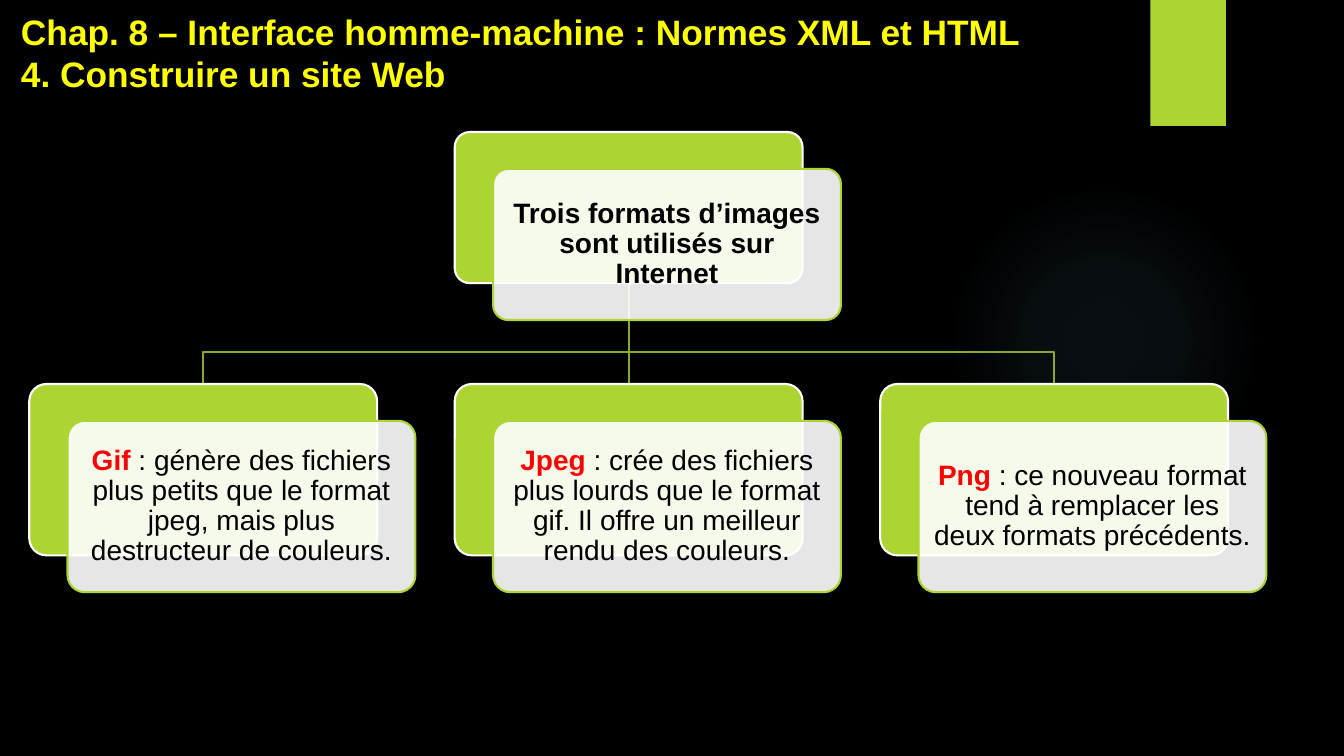
from lxml import etree
from pptx import Presentation
from pptx.dml.color import RGBColor
from pptx.enum.shapes import MSO_CONNECTOR as Link, MSO_SHAPE as Kind
from pptx.enum.text import MSO_ANCHOR as Anchor, PP_ALIGN as Align
from pptx.oxml import parse_xml
from pptx.oxml.ns import nsdecls, qn
from pptx.util import Inches, Pt

TITLE = ["Chap. 8 – Interface homme-machine : Normes XML et HTML",
         "4. Construire un site Web"]
ROOT = [("Trois formats d’images sont utilisés sur Internet", "000000", True)]
FORMATS = [
    ("Gif", " : génère des fichiers plus petits que le format jpeg, "
            "mais plus destructeur de couleurs."),
    ("Jpeg", " : crée des fichiers plus lourds que le format gif. "
             "Il offre un meilleur rendu des couleurs."),
    ("Png", " : ce nouveau format tend à remplacer les deux formats précédents."),
]
GREEN, WIRE, WHITE, GLOW = "ACD433", "8AAA29", "FFFFFF", "7AC4F0"
GLOW_STOPS = [(0, 7), (36, 6), (69, 0)]  # position %, opacity %

LEFT, STEP, WIDE = 0.29, 4.22, 3.45
ROOT_TOP, ROOT_TALL = 1.31, 1.5
LEAF_TOP, LEAF_TALL = 3.81, 1.7
SHIFT_X, SHIFT_Y = 0.38, 0.365
BEND = 3.49

deck = Presentation()
deck.slide_width, deck.slide_height = Inches(13.33), Inches(7.5)
slide = deck.slides.add_slide(deck.slide_layouts[6])
shapes = slide.shapes


def color(code):
    return RGBColor.from_string(code)


def paint(fill, code):
    fill.solid()
    fill.fore_color.rgb = color(code)


def stroke(line, code):
    paint(line.fill, code)
    line.width = Pt(1.5)


def add_box(kind, x, y, w, h, fill, edge=None):
    box = shapes.add_shape(kind, Inches(x), Inches(y), Inches(w), Inches(h))
    box.shadow.inherit = False
    paint(box.fill, fill)
    if edge:
        stroke(box.line, edge)
    else:
        box.line.fill.background()
    return box


def add_run(para, text, size, code, bold):
    run = para.add_run()
    run.text = text
    font = run.font
    font.name, font.size, font.bold = "Arial", Pt(size), bold
    font.color.rgb = color(code)


def add_glow():
    """Faint radial light behind the diagram."""
    glow = add_box(Kind.OVAL, 9.41, 1.83, 3.08, 3.08, GLOW)
    stops = "".join(
        f'<a:gs pos="{pos * 1000}"><a:srgbClr val="{GLOW}">'
        f'<a:alpha val="{alpha * 1000}"/></a:srgbClr></a:gs>'
        for pos, alpha in GLOW_STOPS)
    grad = parse_xml(
        f'<a:gradFill {nsdecls("a")}><a:gsLst>{stops}</a:gsLst>'
        '<a:path path="circle"><a:fillToRect l="50000" t="50000" '
        'r="50000" b="50000"/></a:path></a:gradFill>')
    props = glow.element.spPr
    props.replace(props.find(qn("a:solidFill")), grad)


def add_title():
    box = shapes.add_textbox(Inches(0.11), Inches(0.3), Inches(12.95), Inches(0.69))
    frame = box.text_frame
    frame.word_wrap = True
    frame.vertical_anchor = Anchor.BOTTOM
    para = frame.paragraphs[0]
    for i, text in enumerate(TITLE):
        if i:
            para.add_line_break()
        add_run(para, text, 25.2, "FFFF00", True)


def add_wire(x):
    """Line from the root card down to the leaf card centred on x."""
    start = ROOT_TOP + ROOT_TALL
    if x == mid:
        wire = shapes.add_connector(Link.STRAIGHT, Inches(x), Inches(start),
                                    Inches(x), Inches(LEAF_TOP))
        etree.SubElement(wire.element.spPr, qn("a:effectLst"))
    else:
        pen = shapes.build_freeform(Inches(mid), Inches(start))
        pen.add_line_segments(
            [(Inches(a), Inches(b)) for a, b in
             [(mid, BEND), (x, BEND), (x, LEAF_TOP)]], close=False)
        wire = pen.convert_to_shape()
        wire.fill.background()
        wire.shadow.inherit = False
    stroke(wire.line, WIRE)


def add_card(x, y, tall, runs):
    """Green card with a translucent text card shifted over it."""
    back = add_box(Kind.ROUNDED_RECTANGLE, x, y, WIDE, tall, GREEN, WHITE)
    front = add_box(Kind.ROUNDED_RECTANGLE, x + SHIFT_X, y + SHIFT_Y,
                    WIDE, tall, WHITE, GREEN)
    for box in (back, front):
        box.adjustments[0] = 0.1
    tint = front.element.spPr.find(qn("a:solidFill"))[0]
    etree.SubElement(tint, qn("a:alpha")).set("val", "90000")
    frame = front.text_frame
    frame.word_wrap = True
    frame.vertical_anchor = Anchor.MIDDLE
    frame.margin_left = frame.margin_right = Inches(0.08)
    frame.margin_top = frame.margin_bottom = Inches(0.08)
    para = frame.paragraphs[0]
    para.alignment, para.line_spacing = Align.CENTER, 0.9
    for text, code, bold in runs:
        add_run(para, text, 20, code, bold)


paint(slide.background.fill, "000000")
add_glow()
add_box(Kind.RECTANGLE, 11.41, 0, 0.75, 1.25, GREEN)
add_title()

lefts = [LEFT + i * STEP for i in range(len(FORMATS))]
mid = lefts[1] + WIDE / 2
for x in reversed(lefts):
    add_wire(x + WIDE / 2)
add_card(lefts[1], ROOT_TOP, ROOT_TALL, ROOT)
for x, (name, text) in zip(lefts, FORMATS):
    add_card(x, LEAF_TOP, LEAF_TALL,
             [(name, "FF0000", True), (text, "000000", False)])

deck.save("out.pptx")
